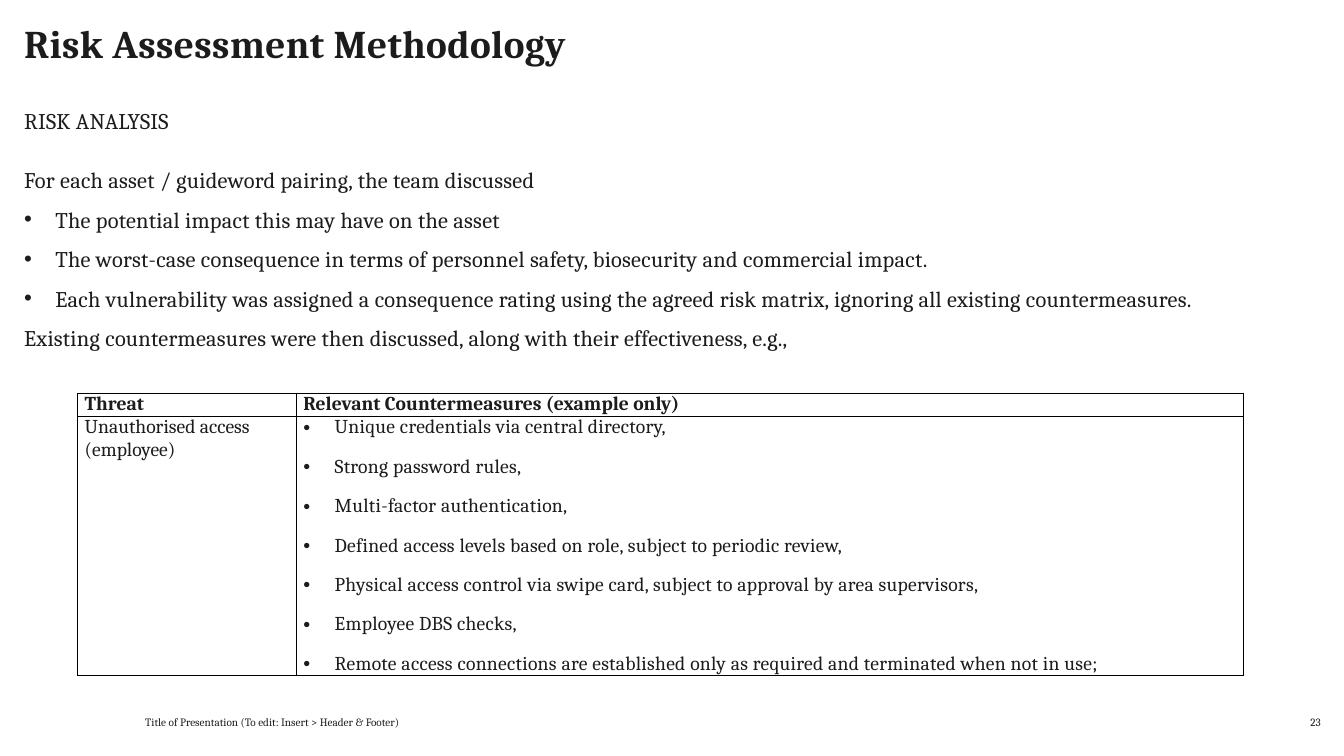
from dataclasses import dataclass
from typing import Any

import lxml.etree
import pptx
import pptx.dml.color
import pptx.enum.text
import pptx.oxml.ns
import pptx.util

Inches = pptx.util.Inches
Pt = pptx.util.Pt
Align = pptx.enum.text.PP_ALIGN
Anchor = pptx.enum.text.MSO_ANCHOR
qn = pptx.oxml.ns.qn


@dataclass(frozen=True)
class Theme:
    font: str = "Cambria"
    ink: str = "1C1C1C"
    border: str = "000000"
    border_width: float = 1
    title: float = 28
    body: float = 16
    table: float = 14
    footer: float = 8
    tracking: float = 0.2
    title_tracking: float = 0.3
    body_gap: float = 9
    table_gap: float = 6
    bullet_indent: float = 0.31


@dataclass(frozen=True)
class Line:
    text: str
    bullet: bool = False


@dataclass(frozen=True)
class Block:
    left: float
    top: float
    width: float
    height: float
    lines: tuple[Line, ...]
    size: float
    align: Any = Align.LEFT
    anchor: Any = Anchor.TOP
    tracking: float = 0


THEME = Theme()
MARGIN, FULL_WIDTH = 0.24, 12.86
TITLE = Line("Risk Assessment Methodology")

BLOCKS = (
    Block(MARGIN, 1.06, FULL_WIDTH, 0.66, (Line("RISK ANALYSIS"),),
          THEME.body, tracking=THEME.tracking),
    Block(MARGIN, 1.65, 11.76, 2.25, (
        Line("For each asset / guideword pairing, the team discussed"),
        Line("The potential impact this may have on the asset", bullet=True),
        Line("The worst-case consequence in terms of personnel safety, "
             "biosecurity and commercial impact.", bullet=True),
        Line("Each vulnerability was assigned a consequence rating using the agreed "
             "risk matrix, ignoring all existing countermeasures.", bullet=True),
        Line("Existing countermeasures were then discussed, along with their "
             "effectiveness, e.g.,"),
    ), THEME.body, tracking=THEME.tracking),
    Block(1.44, 7.03, 5.12, 0.2,
          (Line("Title of Presentation (To edit: Insert > Header & Footer)"),),
          THEME.footer, anchor=Anchor.BOTTOM),
    Block(12.51, 7.03, 0.59, 0.2, (Line("23"),),
          THEME.footer, align=Align.RIGHT, anchor=Anchor.BOTTOM),
)

COUNTERMEASURES = (
    "Unique credentials via central directory,",
    "Strong password rules,",
    "Multi-factor authentication,",
    "Defined access levels based on role, subject to periodic review,",
    "Physical access control via swipe card, subject to approval by area supervisors,",
    "Employee DBS checks,",
    "Remote access connections are established only as required and terminated "
    "when not in use;",
)
TABLE_ROWS = (
    ((Line("Threat"),), (Line("Relevant Countermeasures (example only)"),)),
    ((Line("Unauthorised access (employee)"),),
     tuple(Line(text, bullet=True) for text in COUNTERMEASURES)),
)
COLUMN_WIDTHS = (2.17, 9.39)
ROW_HEIGHTS = (0.23, 2.57)


def add_bullet(para: Any) -> None:
    properties = para._p.get_or_add_pPr()
    indent = Inches(THEME.bullet_indent)
    properties.set("marL", str(indent))
    properties.set("indent", str(-indent))
    font = lxml.etree.SubElement(properties, qn("a:buFont"))
    font.set("typeface", "Arial")
    lxml.etree.SubElement(properties, qn("a:buChar")).set("char", "•")


def write_text(frame: Any, lines: tuple[Line, ...], *, size: float, bold: bool = False,
               align: Any = Align.LEFT, tracking: float = 0, before: float = 0,
               after: float = 0, line_spacing: float = 1) -> None:
    for index, line in enumerate(lines):
        para = frame.add_paragraph() if index else frame.paragraphs[0]
        if line.bullet:
            add_bullet(para)
        para.alignment = align
        para.line_spacing = line_spacing
        para.space_before = Pt(before if index else 0)
        para.space_after = Pt(after if index < len(lines) - 1 else 0)
        span = para.add_run()
        span.text = line.text
        span.font.name = THEME.font
        span.font.size = Pt(size)
        span.font.bold = bold
        span.font.color.rgb = pptx.dml.color.RGBColor.from_string(THEME.ink)
        if tracking:
            span._r.get_or_add_rPr().set("spc", str(round(tracking * 100)))


def prepare_frame(frame: Any, anchor: Any) -> None:
    frame.word_wrap = True
    frame.auto_size = pptx.enum.text.MSO_AUTO_SIZE.NONE
    frame.vertical_anchor = anchor
    frame.margin_left = frame.margin_right = 0
    frame.margin_top = frame.margin_bottom = 0


def set_title(page: Any) -> None:
    title = page.shapes.title
    title.left, title.top = Inches(MARGIN), Inches(MARGIN)
    title.width, title.height = Inches(FULL_WIDTH), Inches(0.79)
    prepare_frame(title.text_frame, Anchor.TOP)
    write_text(title.text_frame, (TITLE,), size=THEME.title, bold=True,
               tracking=THEME.title_tracking, line_spacing=0.9)


def add_block(page: Any, block: Block) -> None:
    box = page.shapes.add_textbox(Inches(block.left), Inches(block.top),
                                  Inches(block.width), Inches(block.height))
    prepare_frame(box.text_frame, block.anchor)
    write_text(box.text_frame, block.lines, size=block.size, align=block.align,
               tracking=block.tracking, before=THEME.body_gap)


def add_borders(cell: Any) -> None:
    properties = cell._tc.get_or_add_tcPr()
    for side in ("a:lnL", "a:lnR", "a:lnT", "a:lnB"):
        edge = lxml.etree.SubElement(properties, qn(side))
        edge.set("w", str(Pt(THEME.border_width)))
        fill = lxml.etree.SubElement(edge, qn("a:solidFill"))
        lxml.etree.SubElement(fill, qn("a:srgbClr")).set("val", THEME.border)


def add_threat_table(page: Any) -> None:
    table = page.shapes.add_table(
        len(ROW_HEIGHTS), len(COLUMN_WIDTHS), Inches(0.77), Inches(3.9),
        Inches(sum(COLUMN_WIDTHS)), Inches(sum(ROW_HEIGHTS))).table
    table.first_row = table.horz_banding = False
    for column, width in zip(table.columns, COLUMN_WIDTHS):
        column.width = Inches(width)
    for row_index, (row, height) in enumerate(zip(table.rows, ROW_HEIGHTS)):
        row.height = Inches(height)
        for cell, lines in zip(row.cells, TABLE_ROWS[row_index]):
            cell.margin_left = cell.margin_right = Inches(0.07)
            cell.margin_top = cell.margin_bottom = 0
            add_borders(cell)
            cell.fill.background()
            write_text(cell.text_frame, lines, size=THEME.table, bold=row_index == 0,
                       tracking=THEME.tracking if lines[0].bullet else 0,
                       before=THEME.table_gap, after=THEME.table_gap)


def main() -> None:
    deck = pptx.Presentation()
    deck.slide_width, deck.slide_height = Inches(13.33), Inches(7.5)
    page = deck.slides.add_slide(deck.slide_layouts.get_by_name("Title Only"))
    set_title(page)
    for block in BLOCKS:
        add_block(page, block)
    add_threat_table(page)
    deck.save("out.pptx")


if __name__ == "__main__":
    main()
